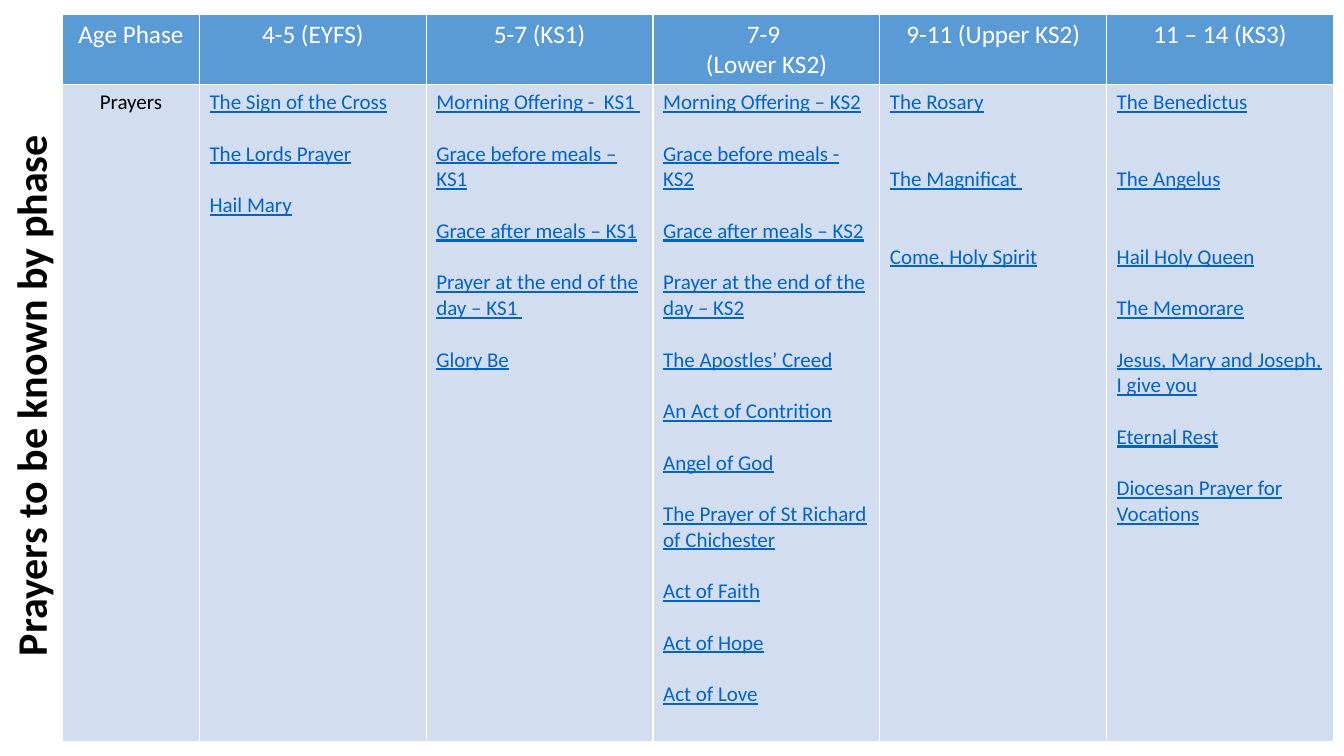
from lxml import etree
from pptx import Presentation
from pptx.dml.color import RGBColor
from pptx.enum.text import MSO_ANCHOR, PP_ALIGN
from pptx.oxml.ns import qn
from pptx.util import Pt

CENTER, LEFT = PP_ALIGN.CENTER, PP_ALIGN.LEFT
MIDDLE = MSO_ANCHOR.MIDDLE

COLORS = {"head": "5B9BD5", "body": "D2DEEF", "white": "FFFFFF",
          "black": "000000", "link": "0563C1"}
LINE = 18.4  # height of one body line

# Heading lines, blank lines between prayers, prayers
PHASES = [
    (["4-5 (EYFS)"], [1, 1],
     ["The Sign of the Cross", "The Lords Prayer", "Hail Mary"]),
    (["5-7 (KS1)"], [1] * 4,
     ["Morning Offering -  KS1 ", "Grace before meals – KS1",
      "Grace after meals – KS1", "Prayer at the end of the day – KS1 ",
      "Glory Be"]),
    (["7-9 ", "(Lower KS2)"], [1] * 10,
     ["Morning Offering – KS2", "Grace before meals - KS2",
      "Grace after meals – KS2", "Prayer at the end of the day – KS2",
      "The Apostles’ Creed", "An Act of Contrition", "Angel of God",
      "The Prayer of St Richard of Chichester", "Act of Faith",
      "Act of Hope", "Act of Love"]),
    (["9-11 (Upper KS2)"], [2, 2],
     ["The Rosary", "The Magnificat ", "Come, Holy Spirit"]),
    (["11 – 14 (KS3)"], [2, 2, 1, 1, 1, 1],
     ["The Benedictus", "The Angelus", "Hail Holy Queen", "The Memorare",
      "Jesus, Mary and Joseph, I give you", "Eternal Rest",
      "Diocesan Prayer for Vocations"]),
]


class Page:
    font = "Calibri"

    def __init__(self, slide):
        self.slide = slide

    def color(self, name):
        return RGBColor.from_string(COLORS[name])

    def text(self, frame, lines, size, color, align=CENTER, bold=False,
             under=False, gaps=()):
        for i, line in enumerate(lines):
            para = frame.add_paragraph() if i else frame.paragraphs[0]
            para.text = line
            para.alignment = align
            if i and gaps:
                para.space_before = Pt(LINE * gaps[i - 1])
            font = para.font
            font.name, font.size = self.font, Pt(size)
            font.bold, font.underline = bold, under
            font.color.rgb = self.color(color)

    def title(self, text, left, top, width, height):
        box = self.slide.shapes.add_textbox(
            Pt(left), Pt(top), Pt(width), Pt(height))
        box.rotation = 270
        frame = box.text_frame
        frame.word_wrap = True
        frame.vertical_anchor = MIDDLE
        self.text(frame, [text], 30, "black", bold=True)
        frame.paragraphs[0].line_spacing = 0.9

    def table(self, left, top, widths, heights):
        shape = self.slide.shapes.add_table(
            len(heights), len(widths), Pt(left), Pt(top),
            Pt(sum(widths)), Pt(sum(heights)))
        table = shape.table
        for col, width in zip(table.columns, widths):
            col.width = Pt(width)
        for row, height in zip(table.rows, heights):
            row.height = Pt(height)
        return table

    def cell(self, cell, fill, lines, size, color, **style):
        props = cell._tc.get_or_add_tcPr()
        for side in ("lnL", "lnR", "lnT", "lnB"):
            edge = etree.SubElement(props, qn("a:" + side), w=str(Pt(1)))
            paint = etree.SubElement(edge, qn("a:solidFill"))
            etree.SubElement(paint, qn("a:srgbClr"), val=COLORS["white"])
        cell.fill.solid()
        cell.fill.fore_color.rgb = self.color(fill)
        self.text(cell.text_frame, lines, size, color, **style)


def main():
    deck = Presentation()
    deck.slide_width, deck.slide_height = Pt(960), Pt(540)
    page = Page(deck.slides.add_slide(deck.slide_layouts[6]))

    # Side title
    page.title("Prayers to be known by phase", -390.2, 230.4, 828, 104.4)

    # Row labels
    table = page.table(44.6, 10.1, [97.9] + [162] * len(PHASES),
                       [50.4, 469.4])
    page.cell(table.cell(0, 0), "head", ["Age Phase"], 18, "white")
    page.cell(table.cell(1, 0), "body", ["Prayers"], 15, "black")

    # One column per phase
    for col, (head, gaps, prayers) in enumerate(PHASES, 1):
        page.cell(table.cell(0, col), "head", head, 18, "white")
        page.cell(table.cell(1, col), "body", prayers, 15, "link",
                  align=LEFT, under=True, gaps=gaps)

    deck.save("out.pptx")


if __name__ == "__main__":
    main()
